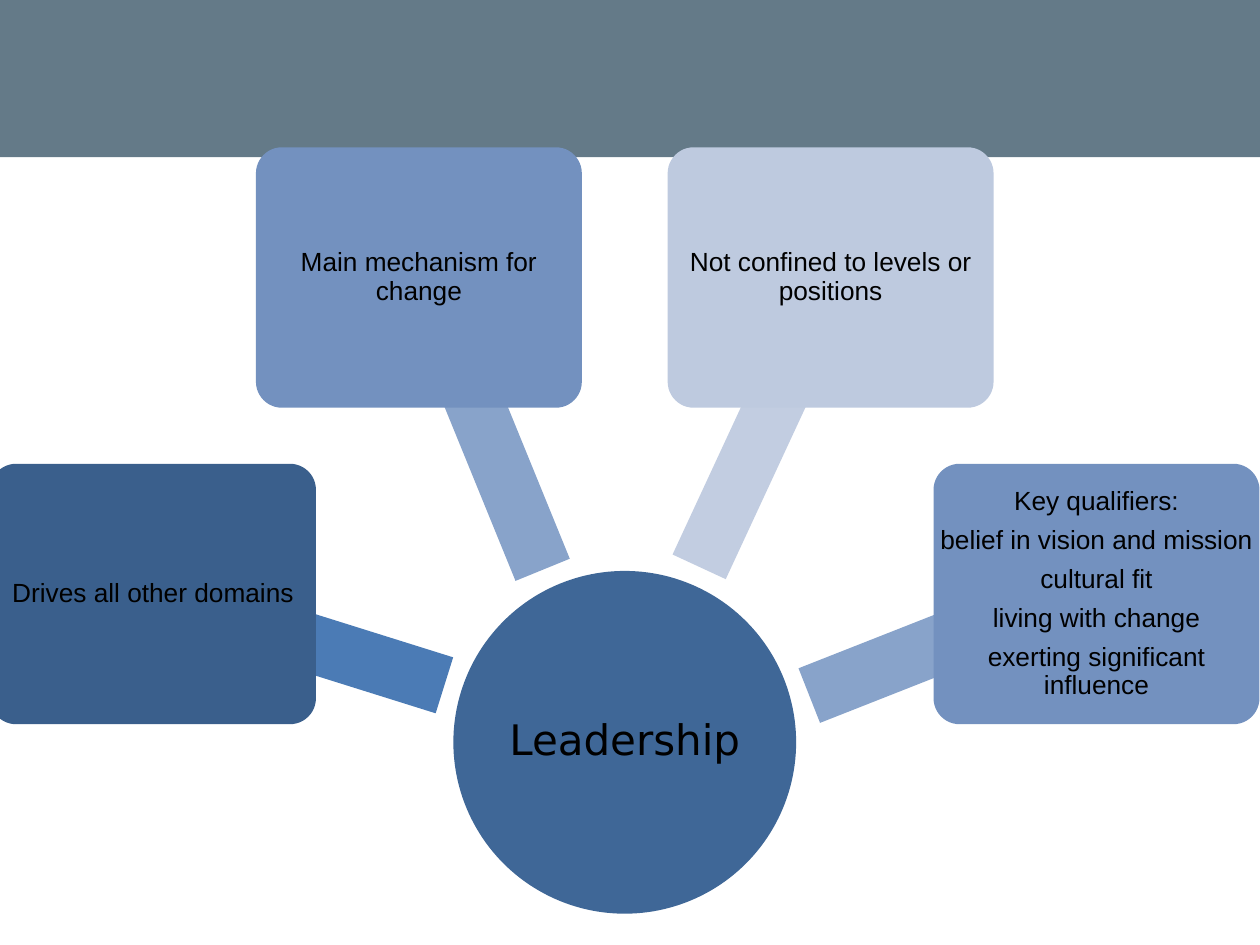
"""Build a slide with four aspects of leadership radiating from a central circle."""
from pptx import Presentation
from pptx.dml.color import RGBColor
from pptx.enum.shapes import MSO_SHAPE
from pptx.enum.text import MSO_ANCHOR, PP_ALIGN
from pptx.util import Cm, Pt


def add_filled(kind, left, top, width, height, color):
    shape = slide.shapes.add_shape(kind, Cm(left), Cm(top), Cm(width), Cm(height))
    shape.shadow.inherit = False
    shape.fill.solid()
    shape.fill.fore_color.rgb = RGBColor.from_string(color)
    shape.line.fill.background()
    return shape


def add_label(left, top, width, height, lines, font, size, inset):
    frame = slide.shapes.add_textbox(Cm(left), Cm(top), Cm(width), Cm(height)).text_frame
    frame.word_wrap = True
    frame.vertical_anchor = MSO_ANCHOR.MIDDLE
    frame.margin_left = frame.margin_right = Cm(inset)
    frame.margin_top = frame.margin_bottom = Cm(inset)
    for index, line in enumerate(lines):
        paragraph = frame.add_paragraph() if index else frame.paragraphs[0]
        paragraph.alignment = PP_ALIGN.CENTER
        paragraph.line_spacing = 0.9
        paragraph.space_after = Pt(size * 0.4)
        run = paragraph.add_run()
        run.text = line
        run.font.name = font
        run.font.size = Pt(size)
        run.font.color.rgb = RGBColor.from_string("000000")


presentation = Presentation()
presentation.slide_width = Cm(25.4)
presentation.slide_height = Cm(19.05)
slide = presentation.slides.add_slide(presentation.slide_layouts[6])

add_filled(MSO_SHAPE.RECTANGLE, 0, 0, 25.4, 3.17, "647A88")

hub = (9.14, 11.51, 6.91, 6.91)
add_filled(MSO_SHAPE.OVAL, *hub, "3F6797")
add_label(*hub, ["Leadership"], "DejaVu Sans", 24, 0.05)

qualifiers = [
    "Key qualifiers:",
    "belief in vision and mission",
    "cultural fit",
    "living with change",
    "exerting significant influence",
]
aspects = [
    ((2.95, 11.91, 6.15), 17.4, "4B7BB5", (-0.2, 9.35), "3A5F8C", ["Drives all other domains"]),
    ((6.53, 7.54, 6.4), 67.8, "88A3CA", (5.16, 2.97), "7391BF", ["Main mechanism for change"]),
    ((12.24, 7.54, 6.4), 114.9, "C2CDE1", (13.46, 2.97), "BECADF",
     ["Not confined to levels or positions"]),
    ((16.1, 11.91, 6.15), 158.5, "88A3CA", (18.82, 9.35), "7391BF", qualifiers),
]
for spoke, angle, spoke_color, corner, box_color, lines in aspects:
    arrow = add_filled(MSO_SHAPE.LEFT_ARROW, *spoke, 1.97, spoke_color)
    arrow.adjustments[0] = 0.6
    arrow.adjustments[1] = 0.5
    arrow.rotation = angle
    box = add_filled(MSO_SHAPE.ROUNDED_RECTANGLE, *corner, 6.57, 5.25, box_color)
    box.adjustments[0] = 0.1
    add_label(*corner, 6.57, 5.25, lines, "Arial", 15, 0.08)

presentation.save("out.pptx")
